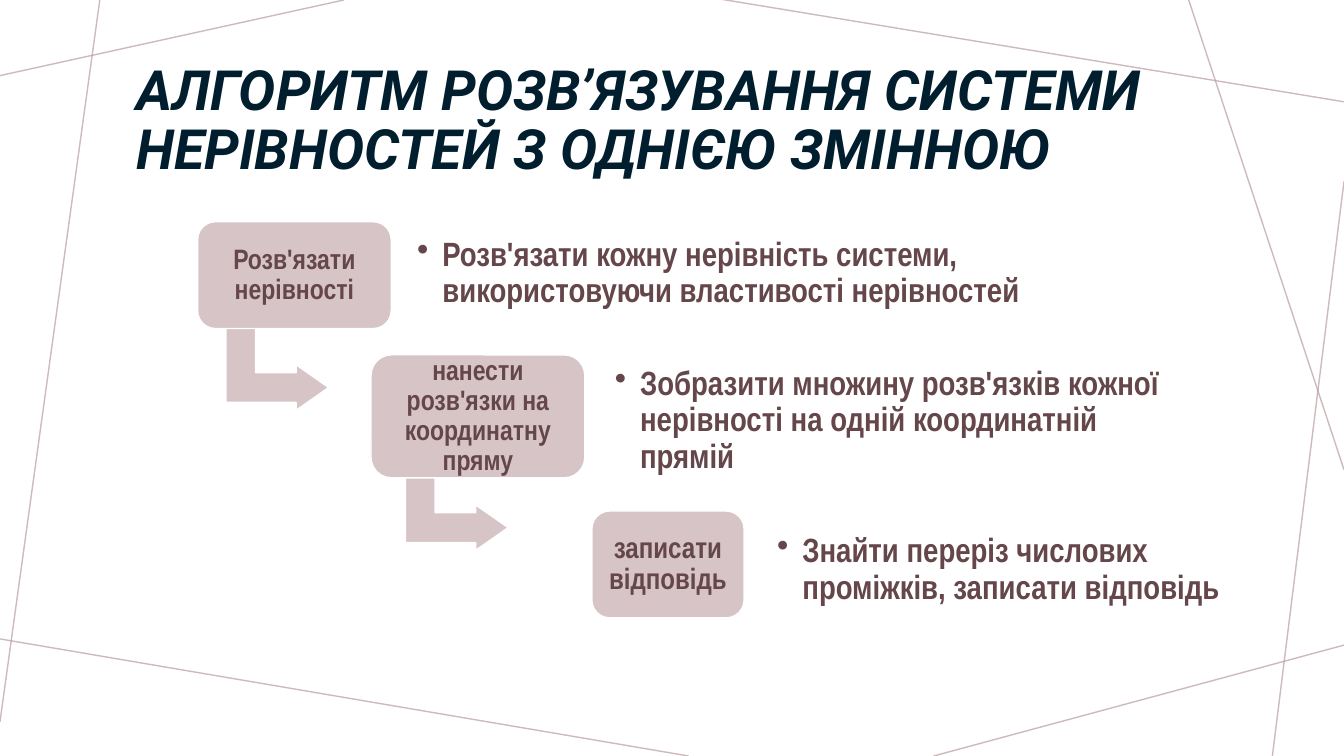
from lxml import etree
from pptx import Presentation
from pptx.dml.color import RGBColor
from pptx.enum import shapes, text
from pptx.oxml import ns
from pptx.util import Inches, Pt

NAVY = RGBColor(0x00, 0x1E, 0x2E)
PLUM = RGBColor(0x65, 0x46, 0x4A)
ROSE = RGBColor(0xD6, 0xC4, 0xC6)
MAUVE = RGBColor(0xBA, 0x9C, 0xA0)
WHITE = RGBColor(0xFF, 0xFF, 0xFF)

TITLE = "АЛГОРИТМ РОЗВ’ЯЗУВАННЯ СИСТЕМИ НЕРІВНОСТЕЙ З ОДНІЄЮ ЗМІННОЮ"
BACKGROUND_LINES = [
    (3.41, 0, 0, 0.75),
    (0.99, 0, 0, 7.16),
    (6.83, 7.5, -0.05, 6.33),
    (13.33, 6.4, 9.26, 7.5),
    (13.33, 1.8, 12.62, 7.5),
    (13.33, 4.66, 11.79, 0),
    (13.33, 1.01, 7.14, -0.01),
]
STEPS = [
    {"label": "Розв'язати нерівності", "size": 20, "inset": 0.08,
     "box": (1.96, 2.2, 1.92, 1.06), "arrow_offset": (0.34, -0.15),
     "note": "Розв'язати кожну нерівність системи, використовуючи властивості нерівностей",
     "note_box": (4.04, 2.26, 7.1, 0.91)},
    {"label": "нанести розв'язки на координатну пряму", "size": 20, "inset": 0.08,
     "box": (3.68, 3.52, 2.12, 1.22), "arrow_offset": (0.4, -0.24),
     "note": "Зобразити множину розв'язків кожної нерівності на одній координатній прямій",
     "note_box": (6, 3.75, 5.95, 0.85)},
    {"label": "записати відповідь", "size": 21, "inset": 0.09,
     "box": (5.87, 5.07, 1.51, 1.06), "arrow_offset": None,
     "note": "Знайти переріз числових проміжків, записати відповідь",
     "note_box": (7.61, 5.23, 4.94, 0.85)},
]


def inches(values):
    """Convert a sequence of numbers to lengths."""
    return [Inches(value) for value in values]


def write_text(shape, content, inset, font_name, size, color, alignment):
    """Fill a shape with one bold, vertically centred paragraph."""
    frame = shape.text_frame
    frame.word_wrap = True
    frame.auto_size = text.MSO_AUTO_SIZE.NONE
    frame.vertical_anchor = text.MSO_ANCHOR.MIDDLE
    frame.margin_left = frame.margin_right = Inches(inset)
    frame.margin_top = frame.margin_bottom = Inches(inset)
    paragraph = frame.paragraphs[0]
    paragraph.text = content
    paragraph.alignment = alignment
    paragraph.line_spacing = 0.9
    font = paragraph.font
    font.name, font.size, font.bold = font_name, Pt(size), True
    font.color.rgb = color
    return paragraph


def add_background(slide):
    """Draw the thin translucent lines around the slide."""
    for ends in BACKGROUND_LINES:
        line = slide.shapes.add_connector(shapes.MSO_CONNECTOR.STRAIGHT, *inches(ends))
        line.line.color.rgb = MAUVE
        line.line.width = Pt(1)
        properties = line._element.spPr
        color = properties.find(".//" + ns.qn("a:srgbClr"))
        etree.SubElement(color, ns.qn("a:alpha"), val="70000")
        etree.SubElement(properties, ns.qn("a:effectLst"))


def add_title(slide, box):
    """Place the heading in the title placeholder."""
    title = slide.shapes.title
    title.left, title.top, title.width, title.height = inches(box)
    paragraph = write_text(title, TITLE, 0.1, "Roboto", 39.6, NAVY, text.PP_ALIGN.LEFT)
    paragraph.font.italic = True
    title.text_frame.margin_top = Inches(0.05)
    title.text_frame.margin_bottom = Inches(0.63)


def add_block(slide, kind, box, adjustments):
    """Add a rose preset shape with a white outline."""
    block = slide.shapes.add_shape(kind, *inches(box))
    block.shadow.inherit = False
    block.fill.solid()
    block.fill.fore_color.rgb = ROSE
    block.line.color.rgb = WHITE
    block.line.width = Pt(1)
    for index, value in enumerate(adjustments):
        block.adjustments[index] = value
    return block


def add_note(slide, content, box):
    """Add the bulleted explanation beside a step."""
    note = slide.shapes.add_textbox(*inches(box))
    paragraph = write_text(note, content, 0.1, "Arial Narrow", 24, PLUM, text.PP_ALIGN.LEFT)
    properties = paragraph._p.get_or_add_pPr()
    properties.set("marL", str(Inches(0.25)))
    properties.set("indent", str(-Inches(0.25)))
    bullet = etree.Element(ns.qn("a:buChar"), char="•")
    properties.find(ns.qn("a:lnSpc")).addnext(bullet)


def add_step(slide, step):
    """Add a step box, its arrow to the next step and its note."""
    left, top, width, height = step["box"]
    if step["arrow_offset"]:
        across, down = step["arrow_offset"]
        arrow_box = (left + across, top + height + down, 0.9, 1.02)
        arrow = add_block(slide, shapes.MSO_SHAPE.BENT_UP_ARROW, arrow_box, (0.328, 0.25, 0.358))
        arrow.rotation = 90
    block = add_block(slide, shapes.MSO_SHAPE.ROUNDED_RECTANGLE, step["box"], (0.167,))
    write_text(block, step["label"], step["inset"], "Arial Narrow", step["size"], PLUM,
               text.PP_ALIGN.CENTER)
    add_note(slide, step["note"], step["note_box"])


def main():
    """Build and save the presentation."""
    presentation = Presentation()
    presentation.slide_width, presentation.slide_height = inches((13.33, 7.5))
    slide = presentation.slides.add_slide(presentation.slide_layouts[5])
    add_background(slide)
    add_title(slide, (1.25, 1.05, 10.83, 0.9))
    for step in STEPS:
        add_step(slide, step)
    presentation.save("out.pptx")


if __name__ == "__main__":
    main()
